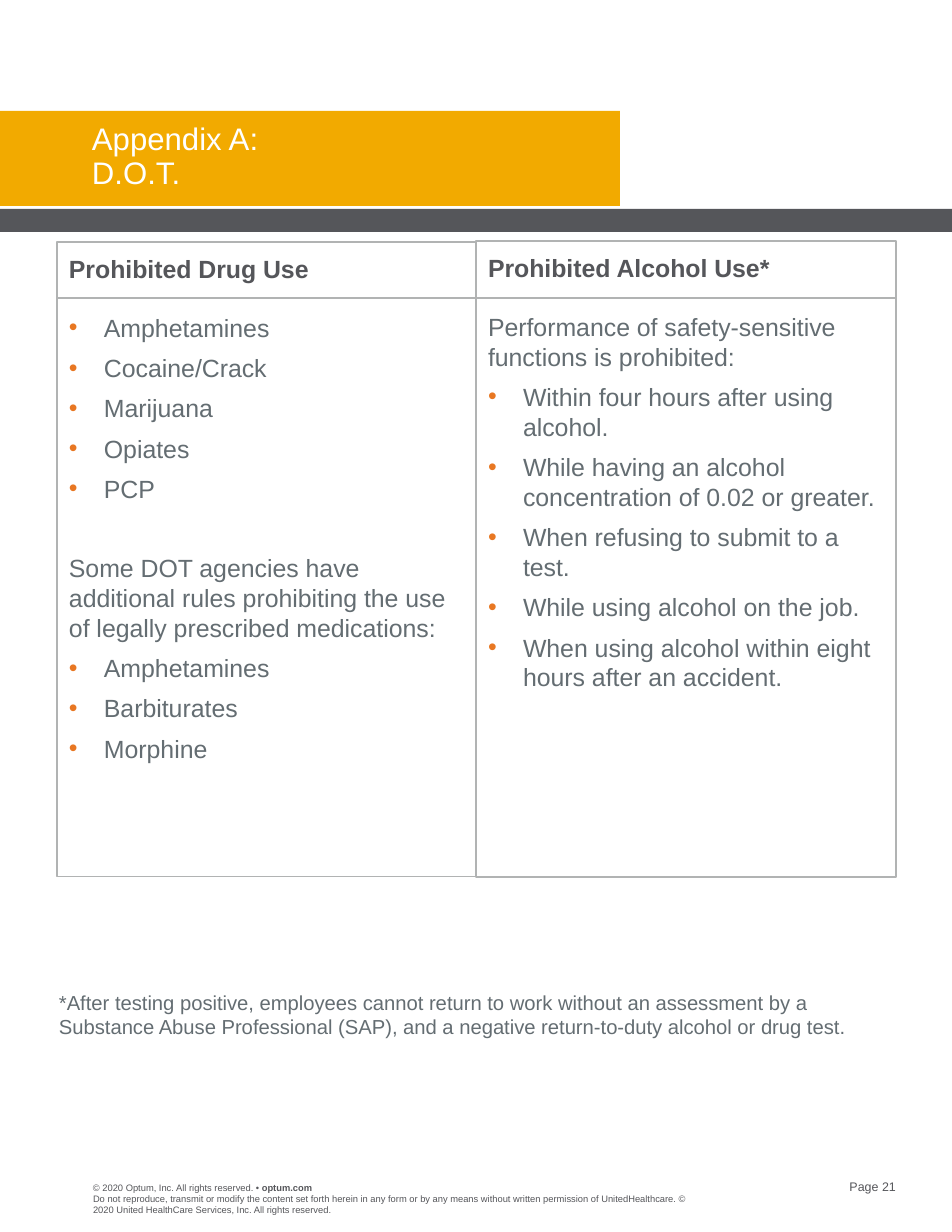
from dataclasses import dataclass

from lxml import etree
from pptx import Presentation
from pptx.dml.color import RGBColor
from pptx.enum.shapes import MSO_CONNECTOR, MSO_SHAPE
from pptx.enum.text import MSO_ANCHOR, PP_ALIGN
from pptx.oxml.ns import qn
from pptx.util import Emu, Pt

RECTANGLE = MSO_SHAPE.RECTANGLE
STRAIGHT = MSO_CONNECTOR.STRAIGHT
TOP = MSO_ANCHOR.TOP
LEFT, RIGHT = PP_ALIGN.LEFT, PP_ALIGN.RIGHT
PX = 914400 // 112


@dataclass(frozen=True)
class Theme:
    font: str = "Arial"
    gold: str = "F2AA00"
    charcoal: str = "55565A"
    body: str = "646D72"
    border: str = "B1B3B3"
    bullet: str = "E87722"
    white: str = "FFFFFF"
    title_size: int = 20
    column_size: int = 16
    note_size: int = 13
    page_size: int = 8
    legal_size: int = 6


THEME = Theme()
SLIDE_SIZE = (952, 1232)
BANDS = [((0, 111, 620, 95), THEME.gold), ((0, 209, 952, 23), THEME.charcoal)]
TITLE = "Appendix A:\vD.O.T."
HEADING, INTRO, BULLET, LAST_BULLET = "heading", "intro", "bullet", "last bullet"
SPACE_AFTER = {HEADING: 18.4, INTRO: 6.7, BULLET: 6.7, LAST_BULLET: 31.8}
COLUMNS = [
    ((57, 242, 419, 635), [
        (HEADING, "Prohibited Drug Use"),
        (BULLET, "Amphetamines"),
        (BULLET, "Cocaine/Crack"),
        (BULLET, "Marijuana"),
        (BULLET, "Opiates"),
        (LAST_BULLET, "PCP"),
        (INTRO, "Some DOT agencies have additional rules prohibiting the use "
                "of legally prescribed medications:"),
        (BULLET, "Amphetamines"),
        (BULLET, "Barbiturates"),
        (BULLET, "Morphine"),
    ]),
    ((476, 241, 420, 636), [
        (HEADING, "Prohibited Alcohol Use*"),
        (INTRO, "Performance of safety-sensitive functions is prohibited:"),
        (BULLET, "Within four hours after using alcohol."),
        (BULLET, "While having an alcohol concentration of 0.02 or greater."),
        (BULLET, "When refusing to submit to a test."),
        (BULLET, "While using alcohol on the job."),
        (BULLET, "When using alcohol within eight hours after an accident."),
    ]),
]
HEADING_RULE = (57, 298, 896, 298)
NOTE = ("*After testing positive, employees cannot return to work without an "
        "assessment by a Substance Abuse Professional (SAP), and a negative "
        "return-to-duty alcohol or drug test.")
COPYRIGHT = "© 2020 Optum, Inc. All rights reserved. • "
WEBSITE = "optum.com"
LEGAL = ("Do not reproduce, transmit or modify the content set forth herein in any "
         "form or by any means without written permission of UnitedHealthcare. "
         "© 2020 United HealthCare Services, Inc. All rights reserved.")
PAGE = "Page 21"


def scaled(lengths):
    return [Emu(length * PX) for length in lengths]


def color(value):
    return RGBColor.from_string(value)


def style(font, size, value, bold=False):
    font.name, font.size, font.bold = THEME.font, Pt(size), bold
    font.color.rgb = color(value)


def set_frame(frame, insets):
    frame.word_wrap = True
    frame.vertical_anchor = TOP
    (frame.margin_left, frame.margin_top,
     frame.margin_right, frame.margin_bottom) = scaled(insets)


def add_rectangle(slide, box, fill=None, line=None):
    shape = slide.shapes.add_shape(RECTANGLE, *scaled(box))
    shape.shadow.inherit = False
    for part, value in ((shape.fill, fill), (shape.line.fill, line)):
        if value:
            part.solid()
            part.fore_color.rgb = color(value)
        else:
            part.background()
    return shape


def add_text(slide, box, text, size, value, insets=(0, 0, 0, 0), align=LEFT):
    frame = slide.shapes.add_textbox(*scaled(box)).text_frame
    set_frame(frame, insets)
    frame.text = text
    paragraph = frame.paragraphs[0]
    paragraph.alignment = align
    for run in paragraph.runs:
        style(run.font, size, value)
    return paragraph


def add_bullet(paragraph):
    properties = paragraph._p.get_or_add_pPr()
    indent = 35 * PX
    properties.set("marL", str(indent))
    properties.set("indent", str(-indent))
    bullet_color = etree.SubElement(properties, qn("a:buClr"))
    etree.SubElement(bullet_color, qn("a:srgbClr"), val=THEME.bullet)
    etree.SubElement(properties, qn("a:buFont"), typeface=THEME.font)
    etree.SubElement(properties, qn("a:buChar"), char="•")


def add_column(slide, box, entries):
    shape = add_rectangle(slide, box, line=THEME.border)
    shape.line.width = Pt(0.75)
    frame = shape.text_frame
    set_frame(frame, (12, 12, 12, 16))
    frame.text = "\n".join(text for _, text in entries)
    for paragraph, (kind, _) in zip(frame.paragraphs, entries):
        paragraph.alignment = LEFT
        paragraph.space_after = Pt(SPACE_AFTER[kind])
        if kind in (BULLET, LAST_BULLET):
            add_bullet(paragraph)
        heading = kind == HEADING
        style(paragraph.runs[0].font, THEME.column_size,
              THEME.charcoal if heading else THEME.body, heading)


def add_rule(slide, ends):
    rule = slide.shapes.add_connector(STRAIGHT, *scaled(ends))
    rule.line.color.rgb = color(THEME.border)
    rule.line.width = Pt(1)
    etree.SubElement(rule._element.spPr, qn("a:effectLst"))


def main():
    presentation = Presentation()
    presentation.slide_width, presentation.slide_height = scaled(SLIDE_SIZE)
    slide = presentation.slides.add_slide(presentation.slide_layouts[6])

    for box, fill in BANDS:
        add_rectangle(slide, box, fill=fill)
    title = add_text(slide, (92, 124, 504, 68), TITLE, THEME.title_size, THEME.white)
    title.line_spacing = 0.9

    for box, entries in COLUMNS:
        add_column(slide, box, entries)
    add_rule(slide, HEADING_RULE)
    add_text(slide, (47, 983, 858, 132), NOTE, THEME.note_size, THEME.body,
             insets=(12, 7, 12, 7))

    copyright_line = add_text(slide, (93, 1182, 224, 11), COPYRIGHT,
                              THEME.legal_size, THEME.charcoal)
    website = copyright_line.add_run()
    website.text = WEBSITE
    style(website.font, THEME.legal_size, THEME.charcoal, bold=True)
    add_text(slide, (93, 1193, 594, 22), LEGAL, THEME.legal_size, THEME.charcoal)
    add_text(slide, (805, 1179, 91, 15), PAGE, THEME.page_size, THEME.charcoal,
             align=RIGHT)

    presentation.save("out.pptx")


if __name__ == "__main__":
    main()
